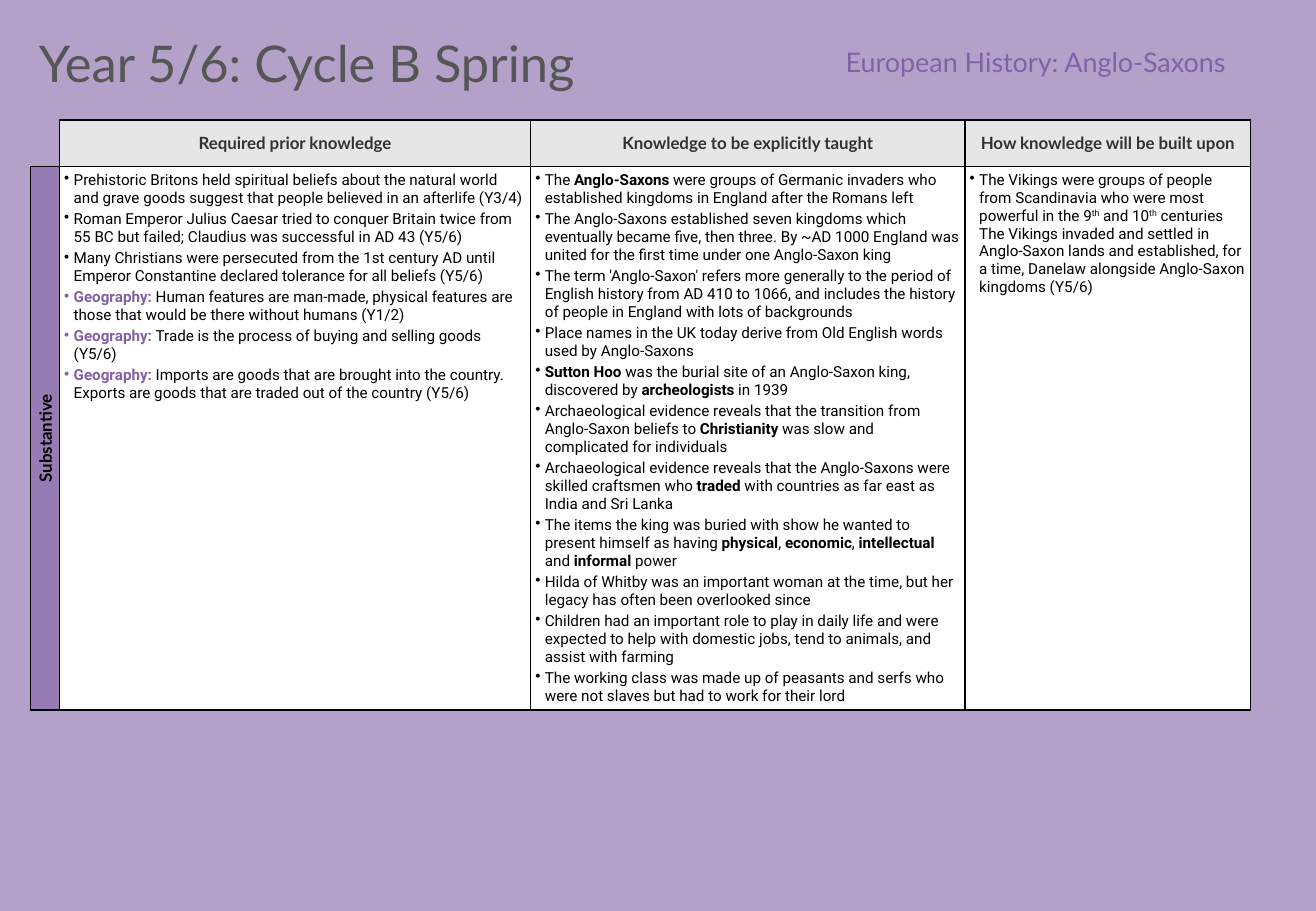
import pptx
import pptx.util
import pptx.dml.color
import pptx.enum.text
import pptx.oxml.ns
from lxml import etree

Cm, Pt = pptx.util.Cm, pptx.util.Pt
RGB = pptx.dml.color.RGBColor
ALIGN = pptx.enum.text.PP_ALIGN
MID = pptx.enum.text.MSO_ANCHOR.MIDDLE
qn = pptx.oxml.ns.qn

LILAC = RGB(0xB4, 0xA1, 0xCA)
PURPLE = RGB(0x82, 0x62, 0xA6)
GREY = RGB(0x56, 0x56, 0x56)
DARK = RGB(0x32, 0x32, 0x32)
PALE = RGB(0xE6, 0xE6, 0xE6)
BLACK = RGB(0, 0, 0)
WHITE = RGB(255, 255, 255)

HEADS = ["Required prior knowledge", "Knowledge to be explicitly taught",
         "How knowledge will be built upon"]
PRIOR = [
    "Prehistoric Britons held spiritual beliefs about the natural world and grave goods suggest that people believed in an afterlife (Y3/4)",
    "Roman Emperor Julius Caesar tried to conquer Britain twice from 55 BC but failed; Claudius was successful in AD 43 (Y5/6)",
    "Many Christians were persecuted from the 1st century AD until Emperor Constantine declared tolerance for all beliefs (Y5/6)",
    "#Geography: |Human features are man-made, physical features are those that would be there without humans (Y1/2)",
    "#Geography: |Trade is the process of buying and selling goods (Y5/6)",
    "#Geography: |Imports are goods that are brought into the country. Exports are goods that are traded out of the country (Y5/6)",
]
TAUGHT = [
    "The |*Anglo-Saxons| were groups of Germanic invaders who established kingdoms in England after the Romans left",
    "The Anglo-Saxons established seven kingdoms which eventually became five, then three. By ~AD 1000 England was united for the first time under one Anglo-Saxon king",
    "The term 'Anglo-Saxon' refers more generally to the period of English history from AD 410 to 1066, and includes the history of people in England with lots of backgrounds",
    "Place names in the UK today derive from Old English words used by Anglo-Saxons",
    "*Sutton Hoo |was the burial site of an Anglo-Saxon king, discovered by |*archeologists| in 1939",
    "Archaeological evidence reveals that the transition from Anglo-Saxon beliefs to |*Christianity| was slow and complicated for individuals",
    "Archaeological evidence reveals that the Anglo-Saxons were skilled craftsmen who |*traded| with countries as far east as India and Sri Lanka",
    "The items the king was buried with show he wanted to present himself as having |*physical|, |*economic|, |*intellectual| and |*informal| power",
    "Hilda of Whitby was an important woman at the time, but her legacy has often been overlooked since",
    "Children had an important role to play in daily life and were expected to help with domestic jobs, tend to animals, and assist with farming",
    "The working class was made up of peasants and serfs who were not slaves but had to work for their lord",
]
BUILT = ["The Vikings were groups of people from Scandinavia who were most powerful in the 9|^th| and 10|^th| centuries The Vikings invaded and settled in Anglo-Saxon lands and established, for a time, Danelaw alongside Anglo-Saxon kingdoms (Y5/6)"]


class Page:
    """Holds the style and the current slide."""

    def __init__(self, deck):
        self.head, self.body = "Lato", "Roboto"
        self.slide = deck.slides.add_slide(deck.slide_layouts[5])
        fill = self.slide.background.fill
        fill.solid()
        fill.fore_color.rgb = LILAC

    def style(self, run, font, size, color, bold=False):
        run.font.name = font
        run.font.size = Pt(size)
        run.font.color.rgb = color
        run.font.bold = bold

    def line(self, shape, text, size, color, align):
        frame = shape.text_frame
        frame.text = text
        frame.word_wrap = True
        frame.auto_size = pptx.enum.text.MSO_AUTO_SIZE.NONE
        frame.vertical_anchor = MID
        frame.paragraphs[0].alignment = align
        self.style(frame.paragraphs[0].runs[0], self.head, size, color)

    def title(self, text, left, top, width, height):
        shape = self.slide.shapes.title
        shape.left, shape.top = Cm(left), Cm(top)
        shape.width, shape.height = Cm(width), Cm(height)
        self.line(shape, text, 30, GREY, ALIGN.LEFT)

    def label(self, text, left, top, width, height):
        shape = self.slide.shapes.add_textbox(Cm(left), Cm(top), Cm(width), Cm(height))
        self.line(shape, text, 16, PURPLE, ALIGN.RIGHT)

    def table(self, left, top, cols, rows):
        grid = self.slide.shapes.add_table(
            len(rows), len(cols), Cm(left), Cm(top), Cm(sum(cols)), Cm(sum(rows))).table
        grid.first_row = grid.horz_banding = False
        for col, width in zip(grid.columns, cols):
            col.width = Cm(width)
        for row, height in zip(grid.rows, rows):
            row.height = Cm(height)
        return grid

    def cell(self, cell, fill=None, sides="LRTB"):
        prop = cell._tc.get_or_add_tcPr()
        for side in "LRTB":
            edge = etree.SubElement(prop, qn("a:ln" + side), w=str(Pt(1)))
            if side in sides:
                paint = etree.SubElement(edge, qn("a:solidFill"))
                etree.SubElement(paint, qn("a:srgbClr"), val=str(BLACK))
            else:
                etree.SubElement(edge, qn("a:noFill"))
        cell.margin_left = cell.margin_right = Cm(0.1)
        cell.margin_top = cell.margin_bottom = Cm(0.1)
        if fill is None:
            cell.fill.background()
        else:
            cell.fill.solid()
            cell.fill.fore_color.rgb = fill

    def heading(self, cell, text, fill, color):
        self.cell(cell, fill)
        cell.text_frame.text = text
        cell.vertical_anchor = MID
        para = cell.text_frame.paragraphs[0]
        para.alignment = ALIGN.CENTER
        self.style(para.runs[0], self.head, 10, color, True)

    def side(self, cell, text):
        self.heading(cell, text, PURPLE, BLACK)
        prop = cell._tc.tcPr
        prop.set("vert", "vert270")
        tint = prop.find(qn("a:solidFill")).find(qn("a:srgbClr"))
        etree.SubElement(tint, qn("a:alpha"), val="60000")

    def bullets(self, cell, items):
        self.cell(cell, WHITE)
        frame = cell.text_frame
        for num, item in enumerate(items):
            para = frame.add_paragraph() if num else frame.paragraphs[0]
            prop = para._p.get_or_add_pPr()
            prop.set("marL", str(Cm(0.2)))
            prop.set("indent", str(Cm(-0.2)))
            etree.SubElement(prop, qn("a:buChar"), char="•")
            para.space_after = Pt(2)
            for part in item.split("|"):
                mark = part[0] if part[0] in "#*^" else ""
                run = para.add_run()
                run.text = part[len(mark):]
                color = PURPLE if mark == "#" else BLACK
                self.style(run, self.body, 9, color, mark in ("#", "*"))
                if mark == "^":
                    run.font._element.set("baseline", "30000")


def main():
    deck = pptx.Presentation()
    deck.slide_width, deck.slide_height = Cm(27.51), Cm(19.05)
    page = Page(deck)
    page.title("Year 5/6: Cycle B Spring", 0.56, 0.66, 15.09, 1.27)
    page.label("European History: Anglo-Saxons", 13.16, 0.66, 12.72, 1.27)
    grid = page.table(0.64, 2.51, [0.6, 9.85, 9.08, 5.97], [0.62, 11.36])
    page.cell(grid.cell(0, 0), sides="RB")
    page.side(grid.cell(1, 0), "Substantive")
    for col, (head, items) in enumerate(zip(HEADS, [PRIOR, TAUGHT, BUILT]), 1):
        page.heading(grid.cell(0, col), head, PALE, DARK)
        page.bullets(grid.cell(1, col), items)
    deck.save("out.pptx")


if __name__ == "__main__":
    main()
